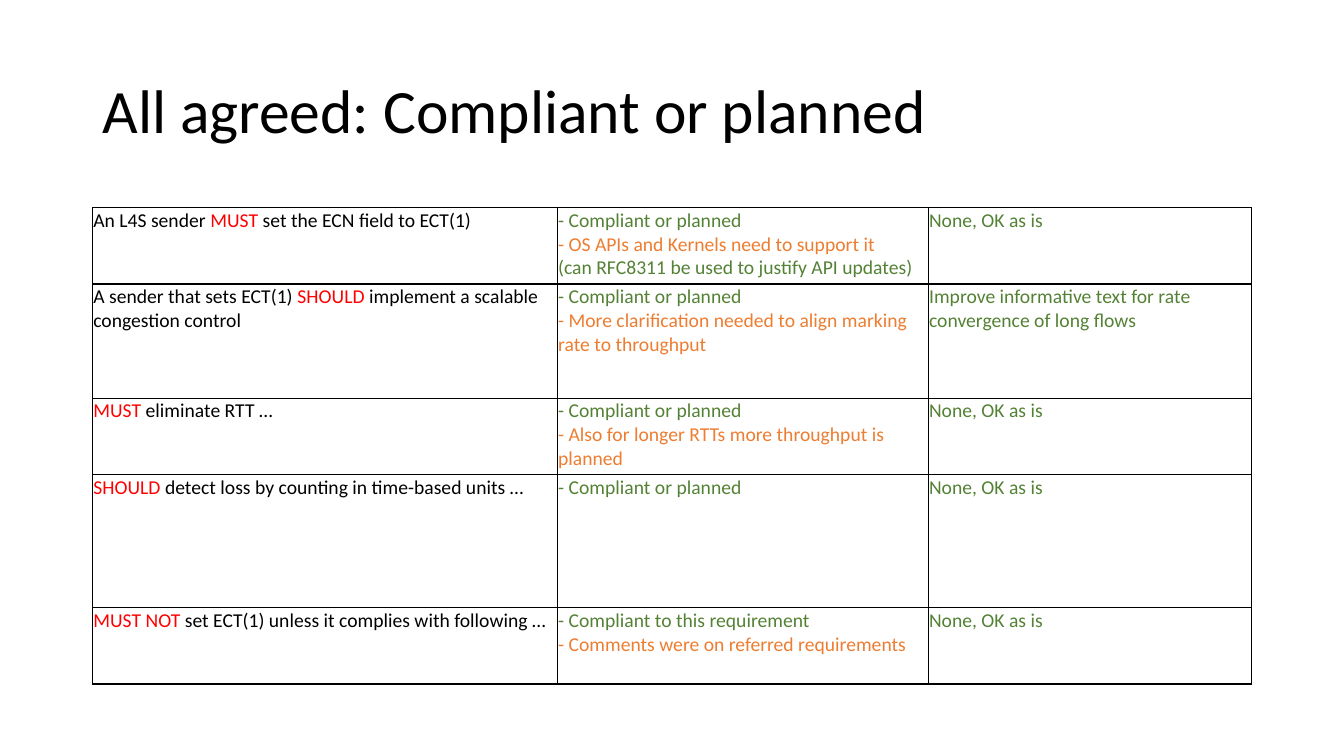
import pptx
import pptx.dml.color
import pptx.enum.text
import pptx.oxml
import pptx.oxml.ns
import pptx.util

Pt = pptx.util.Pt
FONT = "Calibri"
COLORS = {
    "black": "000000",
    "red": "FF0000",
    "green": "548235",
    "orange": "ED7D31",
}
COLUMN_WIDTHS = [332, 265, 231]
ROW_HEIGHTS = [54.6, 81.5, 54.6, 95, 54.6]

# Each cell is a list of lines; each line is a list of (text, color) runs.
COMPLIANT = [("- Compliant or planned", "green")]
NO_CHANGE = [[("None, OK as is", "green")]]
REQUIREMENTS = [
    [
        [[("An L4S sender ", "black"), ("MUST", "red"),
          (" set the ECN field to ECT(1)", "black")]],
        [COMPLIANT,
         [("- OS APIs and Kernels need to support it", "orange")],
         [("(can RFC8311 be used to justify API updates)", "green")]],
        NO_CHANGE,
    ],
    [
        [[("A sender that sets ECT(1) ", "black"), ("SHOULD ", "red"),
          ("implement a scalable congestion control", "black")]],
        [COMPLIANT,
         [("- More clarification needed to align marking rate to throughput", "orange")]],
        [[("Improve informative text for rate convergence of long flows", "green")]],
    ],
    [
        [[("MUST", "red"), (" eliminate RTT …", "black")]],
        [COMPLIANT,
         [("- Also for longer RTTs more throughput is planned", "orange")]],
        NO_CHANGE,
    ],
    [
        [[("SHOULD", "red"),
          (" detect loss by counting in time-based units …", "black")]],
        [COMPLIANT],
        NO_CHANGE,
    ],
    [
        [[("MUST NOT ", "red"),
          ("set ECT(1) unless it complies with following …", "black")]],
        [[("- Compliant to this requirement", "green")],
         [("- Comments were on referred requirements", "orange")]],
        NO_CHANGE,
    ],
]


def format_run(run, size, color):
    run.font.name = FONT
    run.font.size = Pt(size)
    run.font.color.rgb = pptx.dml.color.RGBColor.from_string(COLORS[color])


def add_borders(cell):
    properties = cell._tc.get_or_add_tcPr()
    for index, side in enumerate(("lnL", "lnR", "lnT", "lnB")):
        properties.insert(index, pptx.oxml.parse_xml(
            f'<a:{side} {pptx.oxml.ns.nsdecls("a")} w="{Pt(1)}"><a:solidFill>'
            f'<a:srgbClr val="{COLORS["black"]}"/></a:solidFill></a:{side}>'))


presentation = pptx.Presentation()
presentation.slide_width = Pt(960)
presentation.slide_height = Pt(540)
slide = presentation.slides.add_slide(presentation.slide_layouts[5])

title = slide.shapes.title
title.left, title.top, title.width, title.height = Pt(66), Pt(28.75), Pt(828), Pt(104.4)
title.text_frame.text = "All agreed: Compliant or planned"
title.text_frame.auto_size = pptx.enum.text.MSO_AUTO_SIZE.NONE
title.text_frame.vertical_anchor = pptx.enum.text.MSO_ANCHOR.MIDDLE
title_paragraph = title.text_frame.paragraphs[0]
title_paragraph.alignment = pptx.enum.text.PP_ALIGN.LEFT
title_paragraph.line_spacing = 0.9
format_run(title_paragraph.runs[0], 44, "black")

table = slide.shapes.add_table(
    len(ROW_HEIGHTS), len(COLUMN_WIDTHS), Pt(66), Pt(148.3),
    Pt(sum(COLUMN_WIDTHS)), Pt(sum(ROW_HEIGHTS))).table
table.first_row = False
table.horz_banding = False
for column, width in zip(table.columns, COLUMN_WIDTHS):
    column.width = Pt(width)

for row, height, contents in zip(table.rows, ROW_HEIGHTS, REQUIREMENTS):
    row.height = Pt(height)
    for cell, lines in zip(row.cells, contents):
        cell.fill.background()
        add_borders(cell)
        cell.margin_left = cell.margin_right = cell.margin_top = Pt(0.7)
        cell.margin_bottom = 0
        cell.vertical_anchor = pptx.enum.text.MSO_ANCHOR.TOP
        cell.text_frame.text = "\n" * (len(lines) - 1)
        for paragraph, line in zip(cell.text_frame.paragraphs, lines):
            for text, color in line:
                run = paragraph.add_run()
                run.text = text
                format_run(run, 14, color)

presentation.save("out.pptx")
